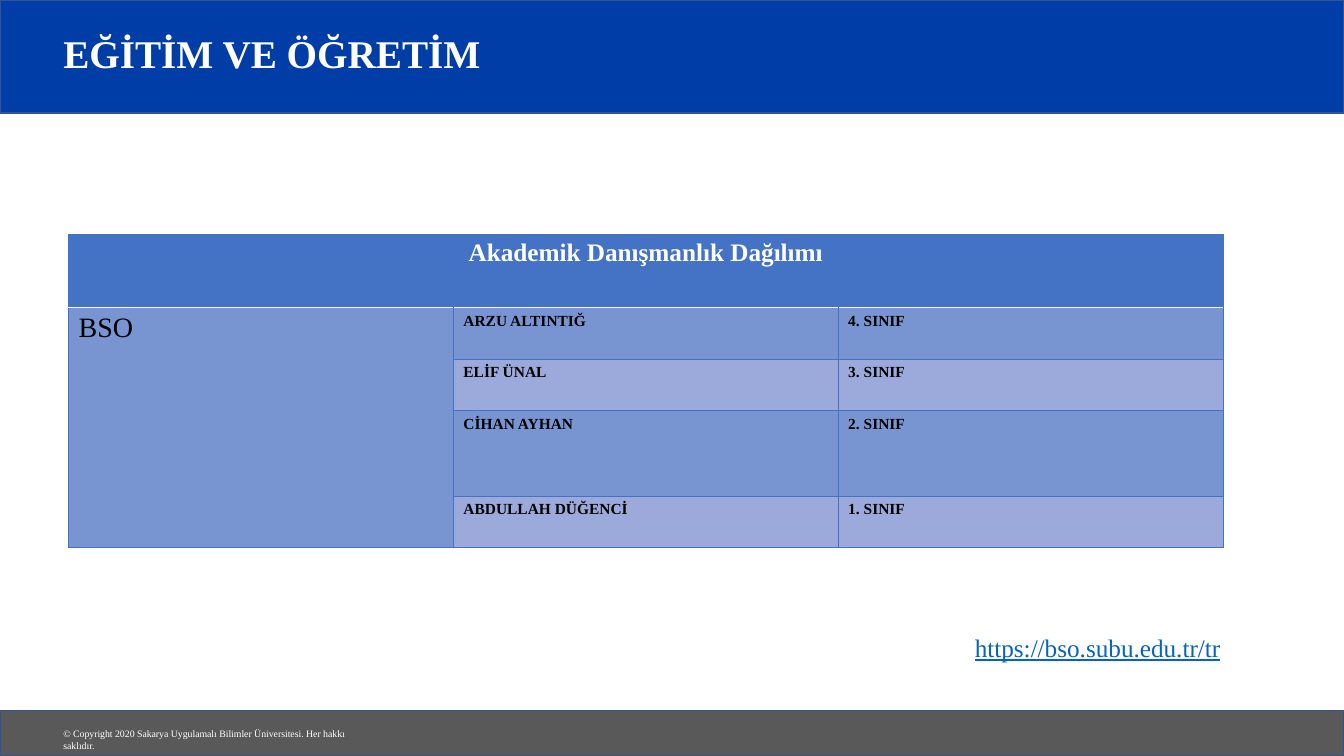
from lxml.etree import SubElement
from pptx import Presentation
from pptx.dml.color import RGBColor
from pptx.enum.shapes import MSO_SHAPE as SHAPE
from pptx.enum.text import MSO_ANCHOR as ANCHOR, PP_ALIGN as ALIGN
from pptx.oxml.ns import qn
from pptx.util import Inches, Pt

# Content
TITLE = "EĞİTİM VE ÖĞRETİM"
TABLE_TITLE = "Akademik Danışmanlık Dağılımı"
DEPARTMENT = "BSO"
ADVISORS = [
    ("ARZU ALTINTIĞ", "4. SINIF"),
    ("ELİF ÜNAL", "3. SINIF"),
    ("CİHAN AYHAN", "2. SINIF"),
    ("ABDULLAH DÜĞENCİ", "1. SINIF"),
]
LINK = "https://bso.subu.edu.tr/tr"
COPYRIGHT = "© Copyright 2020 Sakarya Uygulamalı Bilimler Üniversitesi. Her hakkı saklıdır."

# Look
FONT = "Times New Roman"
WHITE = RGBColor(0xFF, 0xFF, 0xFF)
BLACK = RGBColor(0, 0, 0)
NAVY = RGBColor(0x00, 0x3D, 0xA6)
GREY = RGBColor(0x59, 0x59, 0x59)
BAR_LINE = RGBColor(0x32, 0x54, 0x91)
BLUE = RGBColor(0x44, 0x72, 0xC4)
BANDS = [RGBColor(0x78, 0x94, 0xD1), RGBColor(0x9B, 0xAA, 0xDA)]
LINK_BLUE = RGBColor(0x05, 0x63, 0xC1)

# Layout, in inches
WIDTH, HEIGHT = 13.33, 7.5
HEADER_H, FOOTER_H = 1.12, 0.45
MARGIN = 0.53
TABLE_X, TABLE_Y, TABLE_W = 0.68, 2.32, 11.45
ROW_HEIGHTS = [0.73, 0.51, 0.51, 0.85, 0.51]
COLS = 3


def set_text(tf, text, size, color, bold=False):
    p = tf.paragraphs[0]
    p.text = text
    p.font.name, p.font.size, p.font.bold = FONT, Pt(size), bold
    p.font.color.rgb = color
    return p


def add_text(s, box, text, size, color, bold=False):
    tf = s.shapes.add_textbox(*map(Inches, box)).text_frame
    tf.word_wrap = True
    set_text(tf, text, size, color, bold)
    return tf


def add_bar(s, top, height, color):
    sp = s.shapes.add_shape(SHAPE.RECTANGLE, 0, Inches(top), Inches(WIDTH), Inches(height))
    sp.shadow.inherit = False
    sp.fill.solid()
    sp.fill.fore_color.rgb = color
    sp.line.color.rgb = BAR_LINE
    sp.line.width = Pt(1)


def style_cell(cell, fill, white_side=None):
    """Borders come before the fill in the cell properties."""
    tcPr = cell._tc.get_or_add_tcPr()
    for side in "LRTB":
        color, width = (WHITE, 1) if side == white_side else (BLUE, 0.5)
        ln = SubElement(tcPr, qn(f"a:ln{side}"), w=str(Pt(width)))
        SubElement(SubElement(ln, qn("a:solidFill")), qn("a:srgbClr"), val=str(color))
    cell.fill.solid()
    cell.fill.fore_color.rgb = fill


def add_advisor_table(s):
    rows = len(ROW_HEIGHTS)
    table = s.shapes.add_table(rows, COLS, Inches(TABLE_X), Inches(TABLE_Y),
                               Inches(TABLE_W), Inches(sum(ROW_HEIGHTS))).table
    for col in table.columns:
        col.width = Inches(TABLE_W / COLS)
    for r, height in enumerate(ROW_HEIGHTS):
        table.rows[r].height = Inches(height)
        for c in range(COLS):
            band = BANDS[0] if c == 0 else BANDS[(r - 1) % 2]
            style_cell(table.cell(r, c), band if r else BLUE, {0: "B", 1: "T"}.get(r))

    # Header across all columns, department down all advisor rows
    table.cell(0, 0).merge(table.cell(0, COLS - 1))
    table.cell(1, 0).merge(table.cell(rows - 1, 0))
    p = set_text(table.cell(0, 0).text_frame, TABLE_TITLE, 18, WHITE, True)
    p.alignment = ALIGN.CENTER
    set_text(table.cell(1, 0).text_frame, DEPARTMENT, 20, BLACK)
    for r, advisor in enumerate(ADVISORS, 1):
        for c, text in enumerate(advisor, 1):
            set_text(table.cell(r, c).text_frame, text, 11, BLACK, True)


def main():
    prs = Presentation()
    prs.slide_width, prs.slide_height = Inches(WIDTH), Inches(HEIGHT)
    s = prs.slides.add_slide(prs.slide_layouts[6])

    # Header and footer bars
    add_bar(s, 0, HEADER_H, NAVY)
    add_bar(s, HEIGHT - FOOTER_H, FOOTER_H, GREY)
    add_text(s, (MARGIN, 7.17, 3.29, 0.22), COPYRIGHT, 7, WHITE)

    # Advisors
    add_advisor_table(s)

    # Title
    tf = add_text(s, (MARGIN, 0.19, 11.03, 0.73), TITLE, 28, WHITE, True)
    tf.vertical_anchor = ANCHOR.MIDDLE
    tf.paragraphs[0].line_spacing = 0.9

    # Web address
    tf = add_text(s, (9.57, 6.22, 2.73, 0.4), LINK, 18, LINK_BLUE)
    tf.paragraphs[0].font.underline = True

    prs.save("out.pptx")


if __name__ == "__main__":
    main()
